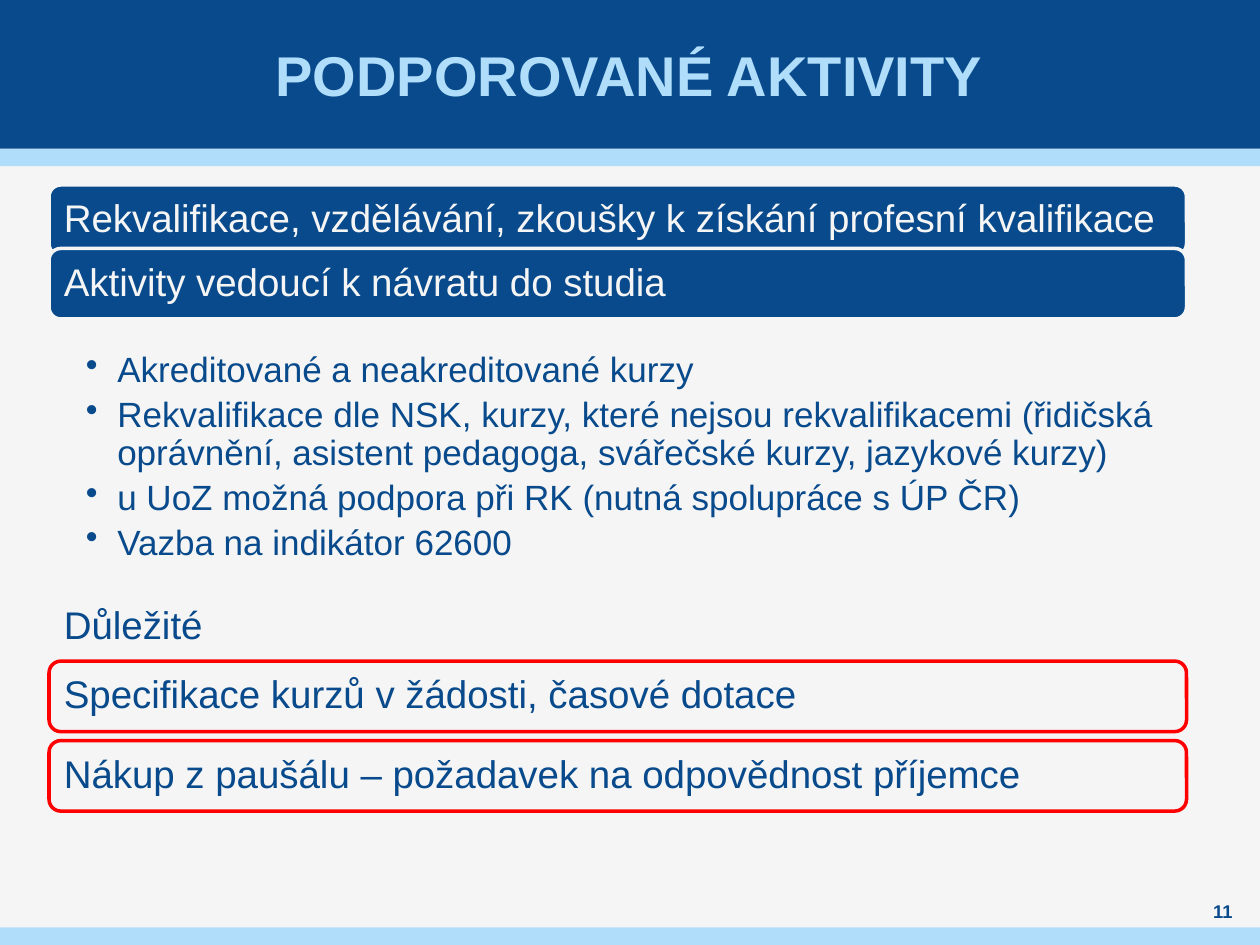
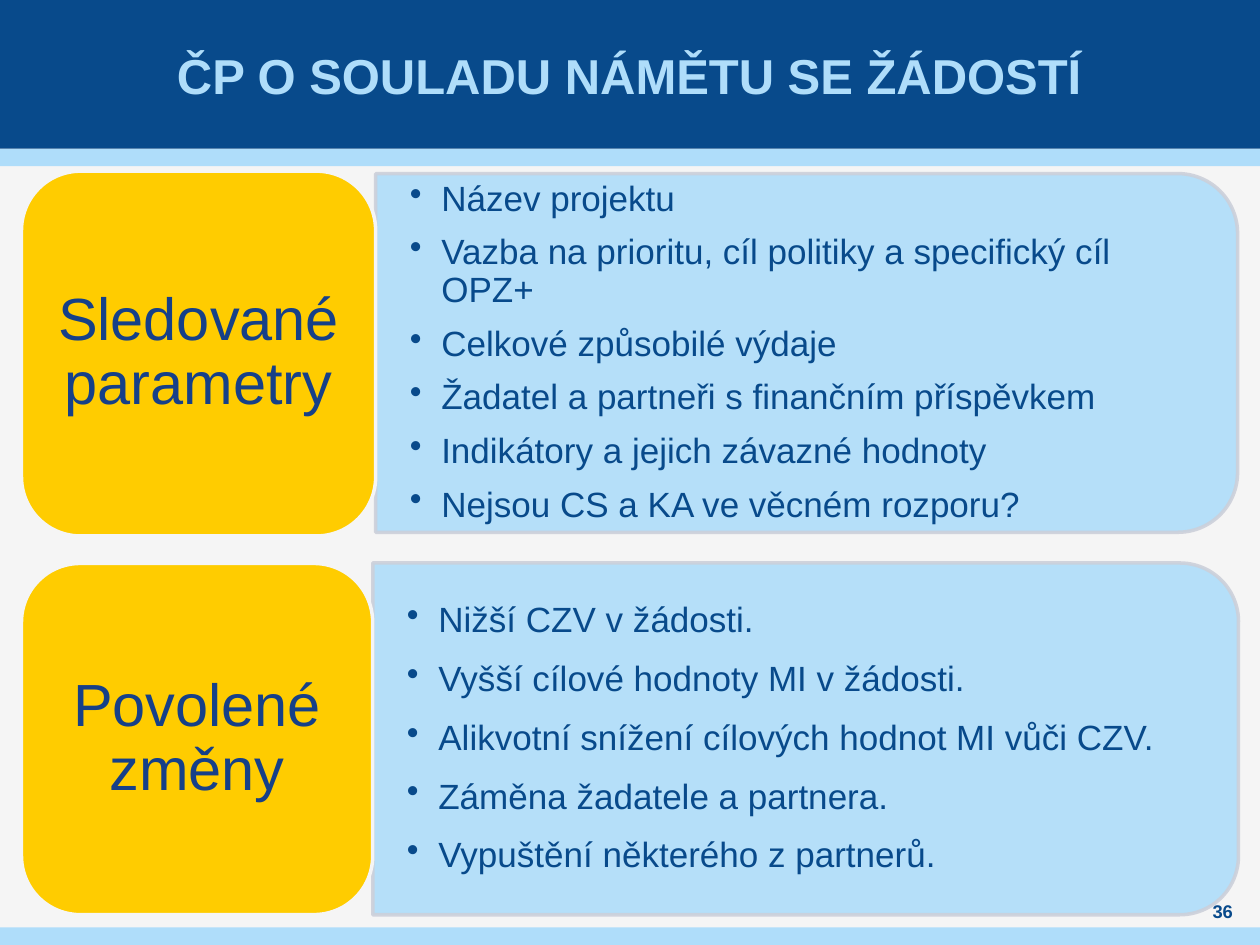
from lxml import etree
from pptx import Presentation
from pptx.dml.color import RGBColor
from pptx.enum.shapes import MSO_SHAPE
from pptx.enum.text import MSO_ANCHOR, PP_ALIGN
from pptx.oxml.ns import qn
from pptx.util import Pt

WIDTH, HEIGHT = 720, 540
HEADER_HEIGHT, STRIPE_HEIGHT = 85, 10
COLORS = {
    "navy": "084A8B",
    "label": "164088",
    "sky": "AFDDFA",
    "paper": "F5F5F5",
    "outline": "CCD0DA",
    "yellow": "FFCC00",
    "red": "FF0000",
}


class Deck:
    """Holds the shared style and the slide being built."""

    font = "Arial"

    def __init__(self):
        self.presentation = Presentation()
        self.presentation.slide_width = Pt(WIDTH)
        self.presentation.slide_height = Pt(HEIGHT)
        self.slide = None

    def color(self, name):
        return RGBColor.from_string(COLORS[name])

    def add_slide(self, title, title_size):
        self.slide = self.presentation.slides.add_slide(self.presentation.slide_layouts[6])
        background = self.slide.background.fill
        background.solid()
        background.fore_color.rgb = self.color("paper")
        # Header and footer bands
        self.shape((0, HEADER_HEIGHT, WIDTH, STRIPE_HEIGHT), "sky")
        self.shape((0, 0, WIDTH, HEADER_HEIGHT), "navy")
        self.shape((0, HEIGHT - STRIPE_HEIGHT, WIDTH, STRIPE_HEIGHT), "sky")
        self.text_box((28, 0, 663, HEADER_HEIGHT), [title], title_size, "sky",
                      margins=(3, 0, 3, 0), align=PP_ALIGN.CENTER, bold=True)

    def shape(self, box, fill, line=None, kind=MSO_SHAPE.RECTANGLE):
        shape = self.slide.shapes.add_shape(kind, *map(Pt, box))
        shape.shadow.inherit = False
        shape.fill.solid()
        shape.fill.fore_color.rgb = self.color(fill)
        if line:
            shape.line.color.rgb = self.color(line)
            shape.line.width = Pt(2)
        else:
            shape.line.fill.background()
        return shape

    def set_text(self, shape, lines, size, color, margins, align=PP_ALIGN.LEFT,
                 anchor=MSO_ANCHOR.MIDDLE, bold=False, line_spacing=None, space_after=0):
        text_frame = shape.text_frame
        text_frame.text = "\n".join(lines)
        text_frame.word_wrap = True
        text_frame.vertical_anchor = anchor
        (text_frame.margin_left, text_frame.margin_top,
         text_frame.margin_right, text_frame.margin_bottom) = map(Pt, margins)
        for paragraph in text_frame.paragraphs:
            paragraph.alignment = align
            paragraph.line_spacing = line_spacing
            paragraph.space_after = Pt(space_after)
            for run in paragraph.runs:
                run.font.name = self.font
                run.font.size = Pt(size)
                run.font.bold = bold
                run.font.color.rgb = self.color(color)

    def text_box(self, box, lines, size, color, **style):
        text_box = self.slide.shapes.add_textbox(*map(Pt, box))
        self.set_text(text_box, lines, size, color, **style)
        return text_box

    def bullets(self, box, items, **style):
        text_box = self.text_box(box, items, 20, "navy", line_spacing=0.9, **style)
        for paragraph in text_box.text_frame.paragraphs:
            properties = paragraph._p.get_or_add_pPr()
            properties.set("marL", str(Pt(18)))
            properties.set("indent", str(-Pt(18)))
            etree.SubElement(properties, qn("a:buChar"), char="•")

    def bar(self, top, text, fill, line, color):
        bar = self.shape((28, top, 650, 40.3), fill, line, MSO_SHAPE.ROUNDED_RECTANGLE)
        self.set_text(bar, [text], 22, color, margins=(6.5,) * 4, line_spacing=0.9)

    def label(self, box, text):
        label = self.shape(box, "yellow", "paper", MSO_SHAPE.ROUNDED_RECTANGLE)
        self.set_text(label, [text], 34, "label", margins=(10, 5, 10, 5),
                      align=PP_ALIGN.CENTER, line_spacing=0.9)

    def panel(self, box, items, space_after):
        left, top, width, height = box
        # The upright shape is turned about its centre to round the right corners
        turned = (left + (width - height) / 2, top + (height - width) / 2, height, width)
        panel = self.shape(turned, "sky", "outline", MSO_SHAPE.ROUND_2_SAME_RECTANGLE)
        panel.rotation = 90
        for color in panel._element.spPr.iter(qn("a:srgbClr")):
            etree.SubElement(color, qn("a:alpha"), val="90000")
        self.bullets((left, top + 10, width - 10, height - 20), items,
                     margins=(19.5, 10, 19.5, 10), space_after=space_after)

    def page_number(self, number):
        self.text_box((680.5, 513.5, 36.5, 14), [str(number)], 10.5, "navy",
                      margins=(0,) * 4, align=PP_ALIGN.CENTER, bold=True)


def add_activities(deck):
    deck.add_slide("PODPOROVANÉ AKTIVITY", 32)

    # Supported activities
    deck.bar(105.7, "Rekvalifikace, vzdělávání, zkoušky k získání profesní kvalifikace",
             "navy", "paper", "paper")
    deck.bar(142, "Aktivity vedoucí k návratu do studia", "navy", "paper", "paper")
    deck.bullets((28, 199.5, 650, 122), [
        "Akreditované a neakreditované kurzy",
        "Rekvalifikace dle NSK, kurzy, které nejsou rekvalifikacemi "
        "(řidičská oprávnění, asistent pedagoga, svářečské kurzy, jazykové kurzy)",
        "u UoZ možná podpora při RK (nutná spolupráce s ÚP ČR)",
        "Vazba na indikátor 62600",
    ], margins=(21, 2, 11.5, 2), anchor=MSO_ANCHOR.TOP, space_after=4)

    # Important requirements
    deck.bar(338, "Důležité", "paper", "paper", "navy")
    deck.bar(377.8, "Specifikace kurzů v žádosti, časové dotace", "paper", "red", "navy")
    deck.bar(423.2, "Nákup z paušálu – požadavek na odpovědnost příjemce",
             "paper", "red", "navy")
    deck.page_number(11)


def add_compliance(deck):
    deck.add_slide("ČP O SOULADU NÁMĚTU SE ŽÁDOSTÍ", 28)

    # Monitored parameters
    deck.panel((214.7, 99.2, 492.5, 205), [
        "Název projektu",
        "Vazba na prioritu, cíl politiky a specifický cíl OPZ+",
        "Celkové způsobilé výdaje",
        "Žadatel a partneři s finančním příspěvkem",
        "Indikátory a jejich závazné hodnoty",
        "Nejsou CS a KA ve věcném rozporu?",
    ], space_after=9)
    deck.label((12.3, 97.8, 202.4, 208.5), "Sledované parametry")

    # Permitted changes
    deck.panel((213, 321.7, 494.7, 201), [
        "Nižší CZV v žádosti.",
        "Vyšší cílové hodnoty MI v žádosti.",
        "Alikvotní snížení cílových hodnot MI vůči CZV.",
        "Záměna žadatele a partnera.",
        "Vypuštění některého z partnerů.",
    ], space_after=12)
    deck.label((12.3, 322, 200.7, 200.7), "Povolené změny")
    deck.page_number(36)


def main():
    deck = Deck()
    add_activities(deck)
    add_compliance(deck)
    deck.presentation.save("out.pptx")


if __name__ == "__main__":
    main()
